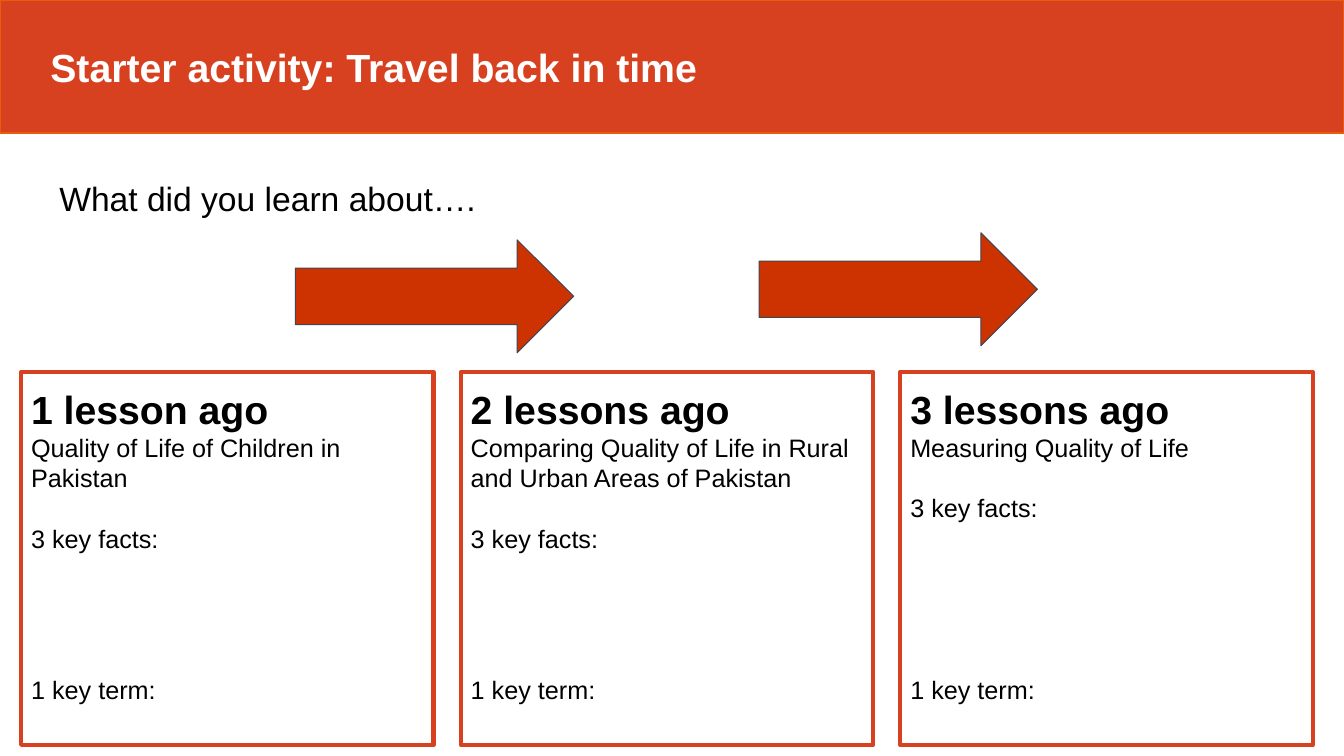
from pptx import Presentation
from pptx.dml.color import RGBColor
from pptx.enum.shapes import MSO_SHAPE as SHAPE
from pptx.enum.text import MSO_ANCHOR as ANCHOR, MSO_AUTO_SIZE as AUTO_SIZE, PP_ALIGN as ALIGN
from pptx.util import Inches, Pt

COLORS = {
    "banner": "D74120",
    "banner_edge": "EA5B0C",
    "arrow": "CC3300",
    "arrow_edge": "454551",
    "text": "000000",
    "banner_text": "FFFFFF",
}
FONT = "Arial"
BODY_LINE = 21.6  # points from one body line to the next

SLIDE_W, SLIDE_H = 13.33, 7.5
CARD_LEFT, CARD_TOP, CARD_W, CARD_H, CARD_STEP = 0.21, 3.69, 4.09, 3.7, 4.36
# heading, topic, empty lines left for the three facts
LESSONS = [
    ("1 lesson ago", "Quality of Life of Children in Pakistan", 4),
    ("2 lessons ago", "Comparing Quality of Life in Rural and Urban Areas of Pakistan", 4),
    ("3 lessons ago", "Measuring Quality of Life", 5),
]
ARROW_W, ARROW_H = 2.76, 1.12
ARROW_POSITIONS = [(2.93, 2.38), (7.53, 2.31)]


def rgb(name):
    return RGBColor.from_string(COLORS[name])


def inches(*lengths):
    return [Inches(length) for length in lengths]


def write(paragraph, text, size=18, bold=False, color="text", before=0, spacing=None):
    paragraph.text = text
    paragraph.alignment = ALIGN.LEFT
    paragraph.font.name = FONT
    paragraph.font.size = Pt(size)
    paragraph.font.bold = bold
    paragraph.font.color.rgb = rgb(color)
    if before:
        paragraph.space_before = Pt(before)
    if spacing:
        paragraph.line_spacing = Pt(spacing)


def set_frame(frame, left=0.1, top=0.05, anchor=ANCHOR.TOP):
    frame.word_wrap = True
    frame.auto_size = AUTO_SIZE.NONE
    frame.vertical_anchor = anchor
    frame.margin_left, frame.margin_top = inches(left, top)
    frame.margin_right, frame.margin_bottom = inches(0.1, 0.05)


def paint(shape, edge, width, fill=None):
    if fill:
        shape.fill.solid()
        shape.fill.fore_color.rgb = rgb(fill)
    else:
        shape.fill.background()
    shape.line.color.rgb = rgb(edge)
    shape.line.width = Pt(width)


def add_banner(slide, left, top, width, height):
    banner = slide.shapes.title
    banner.left, banner.top, banner.width, banner.height = inches(left, top, width, height)
    paint(banner, "banner_edge", 1, fill="banner")
    set_frame(banner.text_frame, left=0.5, anchor=ANCHOR.MIDDLE)
    write(banner.text_frame.paragraphs[0], "Starter activity: Travel back in time",
          size=28, bold=True, color="banner_text")


def add_question(slide, left, top, width, height):
    question = slide.shapes.add_textbox(*inches(left, top, width, height)).text_frame
    set_frame(question)
    write(question.paragraphs[0], "What did you learn about….", size=24)


def add_lesson_card(slide, left, top, width, height, heading, topic, fact_lines):
    card = slide.shapes.add_shape(SHAPE.RECTANGLE, *inches(left, top, width, height))
    card.shadow.inherit = False
    paint(card, "banner", 3)
    frame = card.text_frame
    set_frame(frame, top=0.13)
    write(frame.paragraphs[0], heading, size=28, bold=True)
    for text, empty_lines in [(topic, 0), ("3 key facts:", 1), ("1 key term:", fact_lines)]:
        write(frame.add_paragraph(), text, before=empty_lines * BODY_LINE, spacing=BODY_LINE)


def add_time_arrow(slide, left, top, width, height):
    arrow = slide.shapes.add_shape(SHAPE.RIGHT_ARROW, *inches(left, top, width, height))
    arrow.shadow.inherit = False
    paint(arrow, "arrow_edge", 0.75, fill="arrow")


def main():
    deck = Presentation()
    deck.slide_width, deck.slide_height = inches(SLIDE_W, SLIDE_H)
    slide = deck.slides.add_slide(deck.slide_layouts.get_by_name("Title Only"))
    add_banner(slide, 0, 0, SLIDE_W, 1.32)
    add_question(slide, 0.49, 1.72, 12.6, 0.5)
    for column, lesson in enumerate(LESSONS):
        add_lesson_card(slide, CARD_LEFT + column * CARD_STEP, CARD_TOP, CARD_W, CARD_H, *lesson)
    for left, top in ARROW_POSITIONS:
        add_time_arrow(slide, left, top, ARROW_W, ARROW_H)
    deck.save("out.pptx")


if __name__ == "__main__":
    main()
